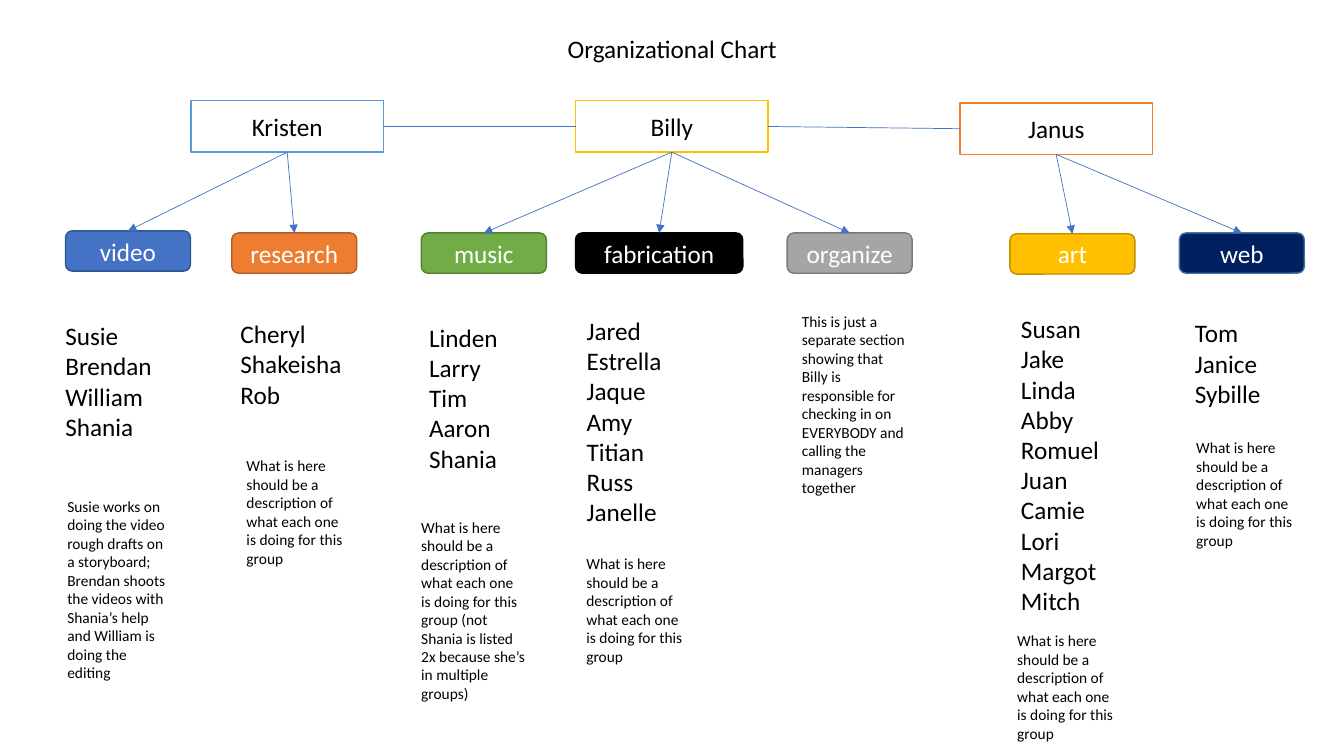
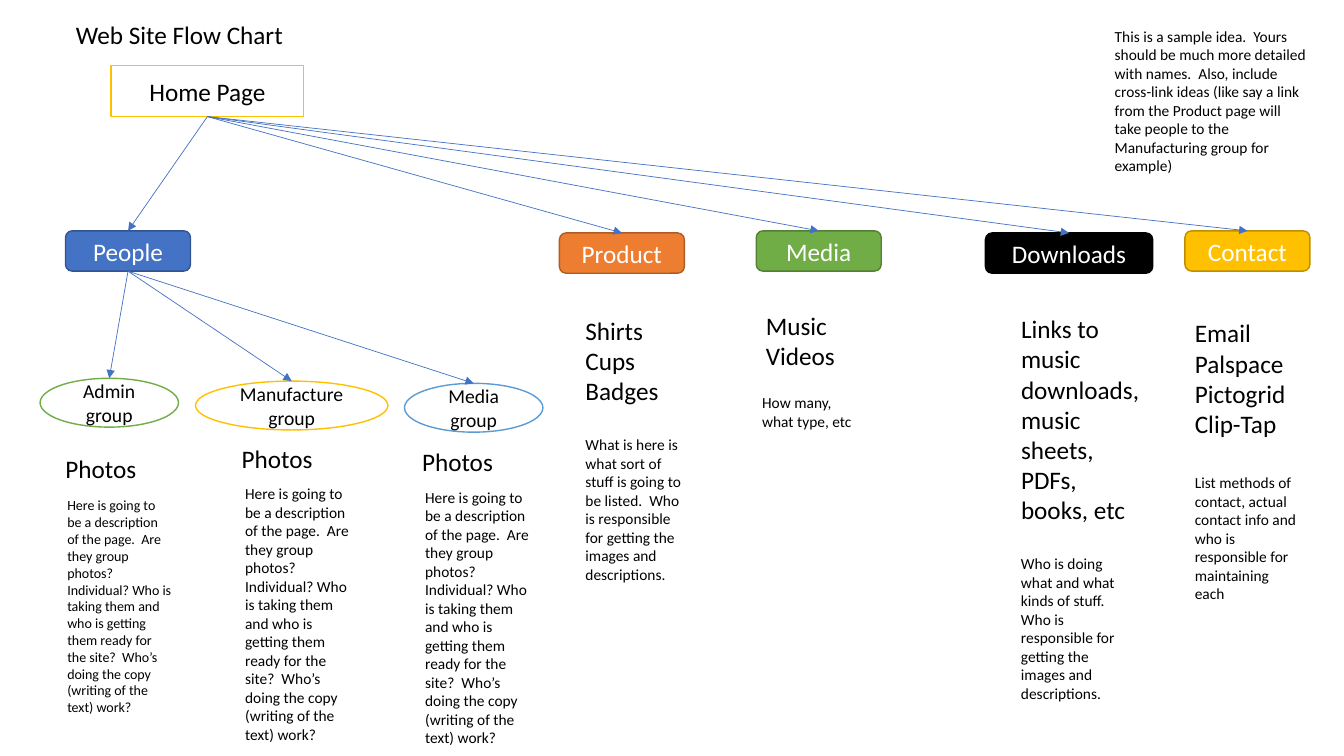
"""Build an organizational chart and a web site flow chart as two slides."""
import pptx
import pptx.dml.color
import pptx.enum.shapes
import pptx.enum.text
import pptx.oxml
import pptx.oxml.ns
import pptx.util

Pt = pptx.util.Pt
SHAPE = pptx.enum.shapes.MSO_SHAPE
ALIGN = pptx.enum.text.PP_ALIGN
FONT = "Calibri"
COLORS = {
    "text": "000000", "paper": "FFFFFF", "link": "4472C4",
    "blue": "4472C4", "blue edge": "325491",
    "orange": "ED7D31", "orange edge": "AF5C24",
    "green": "70AD47", "green edge": "538035",
    "black": "000000", "black edge": "000000",
    "gray": "A5A5A5", "gray edge": "7A7A7A",
    "gold": "FFC000", "gold edge": "BD8E00",
    "navy": "002060", "navy edge": "43739E",
    "sky": "5B9BD5",
}
HEADING, LABEL, NOTE, SMALL = 18, 14, 11, 10
BOX_W, BOX_H = 137.5, 36.7
TAB_W, WIDE_TAB_W, TAB_H = 89.3, 119.5, 28.8
OVAL_W, WIDE_OVAL_W, OVAL_H = 98.9, 137.5, 34.9
COLUMN_W, NOTE_W = 89.3, 88.6
TOP, BOTTOM, LEFT, RIGHT = 0, 2, 1, 3

GROUP_NOTE = "What is here should be a description of what each one is doing for this group"
PAGE_NOTE = (
    "Here is going to be a description of the page.  Are they group photos? Individual? "
    "Who is taking them and who is getting them ready for the site?  "
    "Who’s doing the copy (writing of the text) work?"
)

MANAGERS = [
    ("Kristen", "sky", 136.4, 72),
    ("Billy", "gold", 411.1, 72),
    ("Janus", "orange", 685.7, 73.6),
]
TEAMS = [
    ("Kristen", "video", "blue", 46.8, 164.9, TAB_W),
    ("Kristen", "research", "orange", 165.6, 166.4, TAB_W),
    ("Billy", "music", "green", 301, 166.4, TAB_W),
    ("Billy", "fabrication", "black", 411.1, 166.4, WIDE_TAB_W),
    ("Billy", "organize", "gray", 562.3, 166.4, TAB_W),
    ("Janus", "art", "gold", 721.4, 167, TAB_W),
    ("Janus", "web", "navy", 842.4, 166.4, TAB_W),
]
MEMBERS = [
    (39.6, 225.4, ["Susie", "Brendan", "William", "Shania"]),
    (164.7, 224, ["Cheryl", "Shakeisha", "Rob"]),
    (299.4, 226.4, ["Linden", "Larry", "Tim", "Aaron", "Shania"]),
    (412, 221.6, ["Jared", "Estrella", "Jaque", "Amy", "Titian", "Russ", "Janelle"]),
    (722.2, 220.3, ["Susan", "Jake", "Linda", "Abby", "Romuel",
                    "Juan", "Camie", "Lori", "Margot", "Mitch"]),
    (846.4, 223.4, ["Tom", "Janice", "Sybille"]),
]
TEAM_NOTES = [
    (41, 351.4, 10, "Susie works on doing the video rough drafts on a storyboard; Brendan shoots "
                    "the videos with Shania’s help and William is doing the editing"),
    (169, 322.4, 6, GROUP_NOTE),
    (293.8, 366.2, 10, GROUP_NOTE + " (not Shania is listed 2x because she’s in multiple groups)"),
    (411.8, 392.4, 6, GROUP_NOTE),
    (565.7, 219.2, 10, "This is just a separate section showing that Billy is responsible for "
                       "checking in on EVERYBODY and calling the managers together"),
    (719.5, 447.4, 6, GROUP_NOTE),
    (847.4, 309.6, 6, GROUP_NOTE),
]
PAGES = [
    ("People", "blue", 46.8, 164.9, TAB_W),
    ("Product", "orange", 399.6, 166.4, TAB_W),
    ("Media", "green", 540.2, 164.9, TAB_W),
    ("Downloads", "black", 703.9, 166.4, WIDE_TAB_W),
    ("Contact", "gold", 846.4, 164.9, TAB_W),
]
PAGE_ITEMS = [
    (411.1, 221.6, ["Shirts", "Cups", "Badges"]),
    (540, 218, ["Music", "Videos"]),
    (846.4, 223.4, ["Email", "Palspace", "Pictogrid", "Clip-Tap"]),
]
PAGE_NOTES = [
    (411.1, 307.4, 8, "What is here is what sort of stuff is going to be listed.  "
                      "Who is responsible for getting the images and descriptions."),
    (537.3, 277.3, 2, "How many, what type, etc"),
    (722.2, 392.4, 8, "Who is doing what and what kinds of stuff. "
                      "Who is responsible for getting the images and descriptions."),
    (846.4, 334.6, 7, "List methods of contact, actual contact info and "
                      "who is responsible for maintaining each"),
]
PEOPLE_GROUPS = [
    ("Admin group", "green", 28.6, 270.2, OVAL_W, (39.6, 320.4), (41, 351.4, SMALL, 14)),
    ("Manufacture group", "gold", 139.6, 272.2, WIDE_OVAL_W, (165.6, 313.2), (168, 342.6, NOTE, 14)),
    ("Media group", "sky", 288.9, 273.8, OVAL_W, (294.4, 315.6), (296.6, 344.9, NOTE, 14)),
]


def rgb(name):
    return pptx.dml.color.RGBColor.from_string(COLORS[name])


def write(frame, text, size, color, align):
    frame.word_wrap = True
    frame.text = text
    for paragraph in frame.paragraphs:
        paragraph.alignment = align
        for run in paragraph.runs:
            run.font.name = FONT
            run.font.size = Pt(size)
            run.font.color.rgb = rgb(color)


def add_text(slide, left, top, width, text, size, lines=1, align=ALIGN.LEFT):
    height = 7.2 + 1.21 * size * lines
    box = slide.shapes.add_textbox(Pt(left), Pt(top), Pt(width), Pt(height))
    write(box.text_frame, text, size, "text", align)
    box.text_frame.auto_size = pptx.enum.text.MSO_AUTO_SIZE.SHAPE_TO_FIT_TEXT


def add_title(slide, left, top, text):
    add_text(slide, left, top, 252, text, HEADING, align=ALIGN.CENTER)


def add_items(slide, left, top, items):
    add_text(slide, left, top, COLUMN_W, "\n".join(items), HEADING, len(items))


def add_note(slide, left, top, lines, text, size=NOTE, width=NOTE_W):
    add_text(slide, left, top, width, text, size, lines)


def add_node(slide, outline, bounds, text, fill, edge, color="text", size=HEADING):
    node = slide.shapes.add_shape(outline, *map(Pt, bounds))
    node.shadow.inherit = False
    node.fill.solid()
    node.fill.fore_color.rgb = rgb(fill)
    node.line.color.rgb = rgb(edge)
    node.line.width = Pt(1)
    node.text_frame.vertical_anchor = pptx.enum.text.MSO_ANCHOR.MIDDLE
    write(node.text_frame, text, size, color, ALIGN.CENTER)
    return node


def add_box(slide, text, edge, left, top):
    return add_node(slide, SHAPE.RECTANGLE, (left, top, BOX_W, BOX_H), text, "paper", edge)


def add_tab(slide, text, color, left, top, width):
    return add_node(slide, SHAPE.ROUNDED_RECTANGLE, (left, top, width, TAB_H),
                    text, color, color + " edge", "paper")


def add_oval(slide, text, edge, left, top, width):
    return add_node(slide, SHAPE.OVAL, (left, top, width, OVAL_H),
                    text, "paper", edge, size=LABEL)


def add_link(slide, start, end, start_side=BOTTOM, end_side=TOP, arrow=True):
    link = slide.shapes.add_connector(pptx.enum.shapes.MSO_CONNECTOR.STRAIGHT, 0, 0, 0, 0)
    link.begin_connect(start, start_side)
    link.end_connect(end, end_side)
    link.line.color.rgb = rgb("link")
    link.line.width = Pt(0.5)
    if arrow:
        line = link.line._get_or_add_ln()
        line.append(pptx.oxml.parse_xml(
            f'<a:tailEnd {pptx.oxml.ns.nsdecls("a")} type="triangle"/>'))
    link._element.spPr.append(pptx.oxml.parse_xml(
        f'<a:effectLst {pptx.oxml.ns.nsdecls("a")}/>'))


def build_organization(slide):
    add_title(slide, 354.2, 20.2, "Organizational Chart")
    managers = {manager[0]: add_box(slide, *manager) for manager in MANAGERS}
    for manager, *team in TEAMS:
        add_link(slide, managers[manager], add_tab(slide, *team))
    row = list(managers.values())
    for left_manager, right_manager in zip(row, row[1:]):
        add_link(slide, left_manager, right_manager, RIGHT, LEFT, arrow=False)
    for members in MEMBERS:
        add_items(slide, *members)
    for note in TEAM_NOTES:
        add_note(slide, *note)


def build_site_flow(slide):
    add_title(slide, 2.2, 10.1, "Web Site Flow Chart")
    home = add_box(slide, "Home Page", "gold", 79.4, 46.6)
    pages = {page[0]: add_tab(slide, *page) for page in PAGES}
    for page in pages.values():
        add_link(slide, home, page)
    for items in PAGE_ITEMS:
        add_items(slide, *items)
    add_text(slide, 722.2, 220.3, 101.5,
             "Links to music downloads, music sheets, PDFs, books, etc", HEADING, 7)
    for note in PAGE_NOTES:
        add_note(slide, *note)
    add_note(slide, 789.1, 15.8, 8,
             "This is a sample idea.  Yours should be much more detailed with names.  "
             "Also, include cross-link ideas (like say a link from the Product page will "
             "take people to the Manufacturing group for example)", width=152.6)
    for text, edge, left, top, width, photos, (note_left, note_top, size, lines) in PEOPLE_GROUPS:
        add_link(slide, pages["People"], add_oval(slide, text, edge, left, top, width))
        add_items(slide, *photos, ["Photos"])
        add_note(slide, note_left, note_top, lines, PAGE_NOTE, size)


def main():
    deck = pptx.Presentation()
    deck.slide_width, deck.slide_height = Pt(960), Pt(540)
    for build in (build_organization, build_site_flow):
        build(deck.slides.add_slide(deck.slide_layouts[6]))
    deck.save("out.pptx")


if __name__ == "__main__":
    main()
